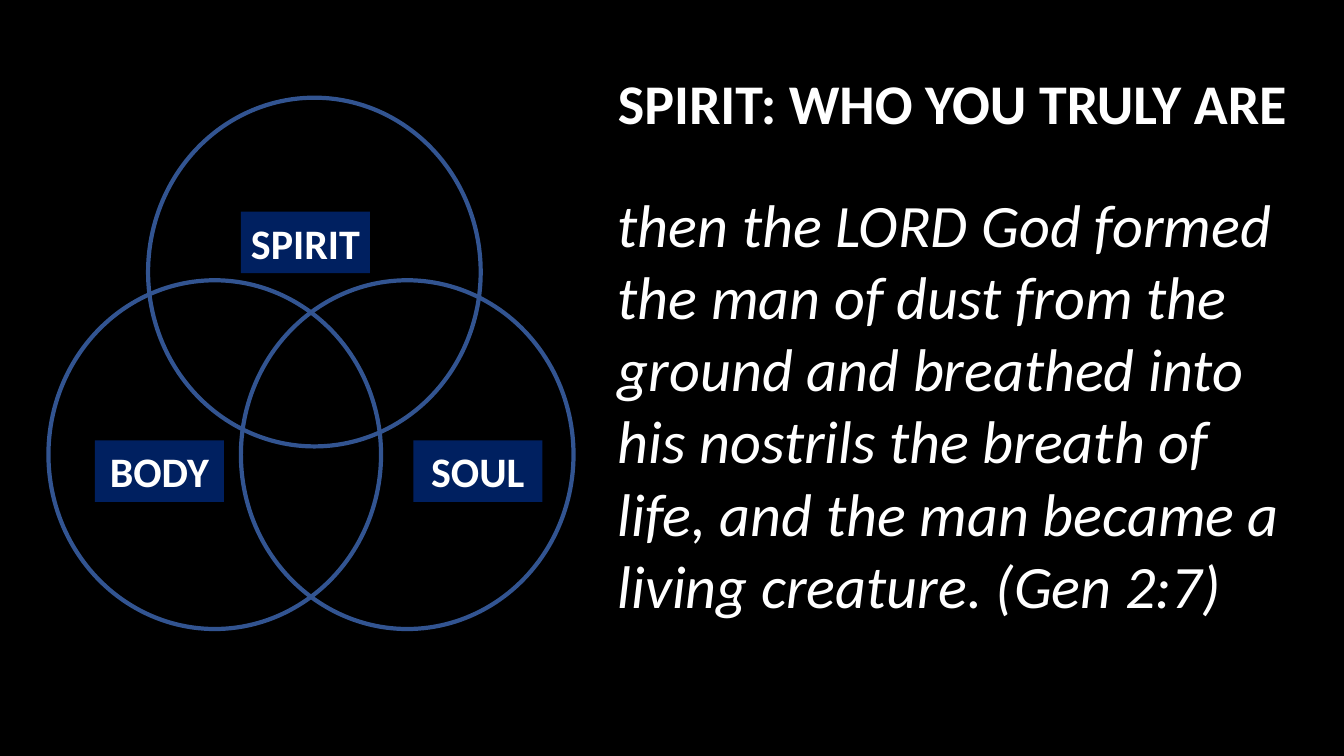
from dataclasses import dataclass

from pptx import Presentation
from pptx.dml.color import RGBColor
from pptx.enum.shapes import MSO_SHAPE
from pptx.enum.text import MSO_ANCHOR, MSO_AUTO_SIZE, PP_ALIGN
from pptx.slide import Slide
from pptx.text.text import TextFrame
from pptx.util import Pt

OVAL, RECTANGLE = MSO_SHAPE.OVAL, MSO_SHAPE.RECTANGLE
TOP, MIDDLE = MSO_ANCHOR.TOP, MSO_ANCHOR.MIDDLE
LEFT, CENTER = PP_ALIGN.LEFT, PP_ALIGN.CENTER
NO_AUTOFIT = MSO_AUTO_SIZE.NONE
TITLE_ONLY = 5


@dataclass(frozen=True)
class Theme:
    font: str = "Calibri"
    background: RGBColor = RGBColor(0x00, 0x00, 0x00)
    text: RGBColor = RGBColor(0xFF, 0xFF, 0xFF)
    ring: RGBColor = RGBColor(0x32, 0x54, 0x91)
    label: RGBColor = RGBColor(0x00, 0x20, 0x60)
    title_size: float = 40
    verse_size: float = 43
    label_size: float = 30


@dataclass(frozen=True)
class Part:
    """One ring of the diagram and its label, each by its top left corner."""
    name: str
    ring_left: float
    ring_top: float
    label_left: float
    label_top: float


THEME = Theme()
RING_WIDTH, RING_HEIGHT, RING_LINE = 237.6, 249.1, 3
LABEL_WIDTH, LABEL_HEIGHT = 92.2, 43.9
LOWER_RING_TOP, LOWER_LABEL_TOP = 200.2, 314.6
TEXT_LEFT, TEXT_WIDTH = 434.2, 506.9

PARTS = (
    Part("BODY", 34.6, LOWER_RING_TOP, 67.7, LOWER_LABEL_TOP),
    Part("SOUL", 172.1, LOWER_RING_TOP, 295.2, LOWER_LABEL_TOP),
    Part("SPIRIT", 105.8, 69.8, 172.1, 151.2),
)
TITLE = "SPIRIT: WHO YOU TRULY ARE"
VERSE = (
    "then the LORD God formed the man of dust from the ground and breathed "
    "into his nostrils the breath of life, and the man became a living "
    "creature. (Gen 2:7)"
)


def write(frame: TextFrame, text: str, size: float, align: PP_ALIGN,
          anchor: MSO_ANCHOR, bold: bool = False, italic: bool = False) -> None:
    frame.word_wrap = True
    frame.auto_size = NO_AUTOFIT
    frame.vertical_anchor = anchor
    para = frame.paragraphs[0]
    para.alignment = align
    para.line_spacing = 1.0
    span = para.add_run()
    span.text = text
    span.font.name = THEME.font
    span.font.size = Pt(size)
    span.font.bold = bold
    span.font.italic = italic
    span.font.color.rgb = THEME.text


def add_ring(page: Slide, part: Part) -> None:
    ring = page.shapes.add_shape(OVAL, Pt(part.ring_left), Pt(part.ring_top),
                                 Pt(RING_WIDTH), Pt(RING_HEIGHT))
    ring.shadow.inherit = False
    ring.fill.background()
    ring.line.color.rgb = THEME.ring
    ring.line.width = Pt(RING_LINE)


def add_label(page: Slide, part: Part) -> None:
    label = page.shapes.add_shape(RECTANGLE, Pt(part.label_left), Pt(part.label_top),
                                  Pt(LABEL_WIDTH), Pt(LABEL_HEIGHT))
    label.shadow.inherit = False
    label.fill.solid()
    label.fill.fore_color.rgb = THEME.label
    label.line.fill.background()
    write(label.text_frame, part.name, THEME.label_size, CENTER, MIDDLE, bold=True)


def add_title(page: Slide) -> None:
    title = page.shapes.title
    title.left, title.top = Pt(TEXT_LEFT), Pt(45)
    title.width, title.height = Pt(TEXT_WIDTH), Pt(56)
    write(title.text_frame, TITLE, THEME.title_size, LEFT, TOP, bold=True)


def add_verse(page: Slide) -> None:
    box = page.shapes.add_textbox(Pt(TEXT_LEFT), Pt(130), Pt(TEXT_WIDTH), Pt(325))
    write(box.text_frame, VERSE, THEME.verse_size, LEFT, TOP, italic=True)


def main() -> None:
    deck = Presentation()
    deck.slide_width, deck.slide_height = Pt(960), Pt(540)
    page = deck.slides.add_slide(deck.slide_layouts[TITLE_ONLY])
    page.background.fill.solid()
    page.background.fill.fore_color.rgb = THEME.background
    add_title(page)
    add_verse(page)
    for part in PARTS:
        add_ring(page, part)
    for part in PARTS:
        add_label(page, part)
    deck.save("out.pptx")


if __name__ == "__main__":
    main()
